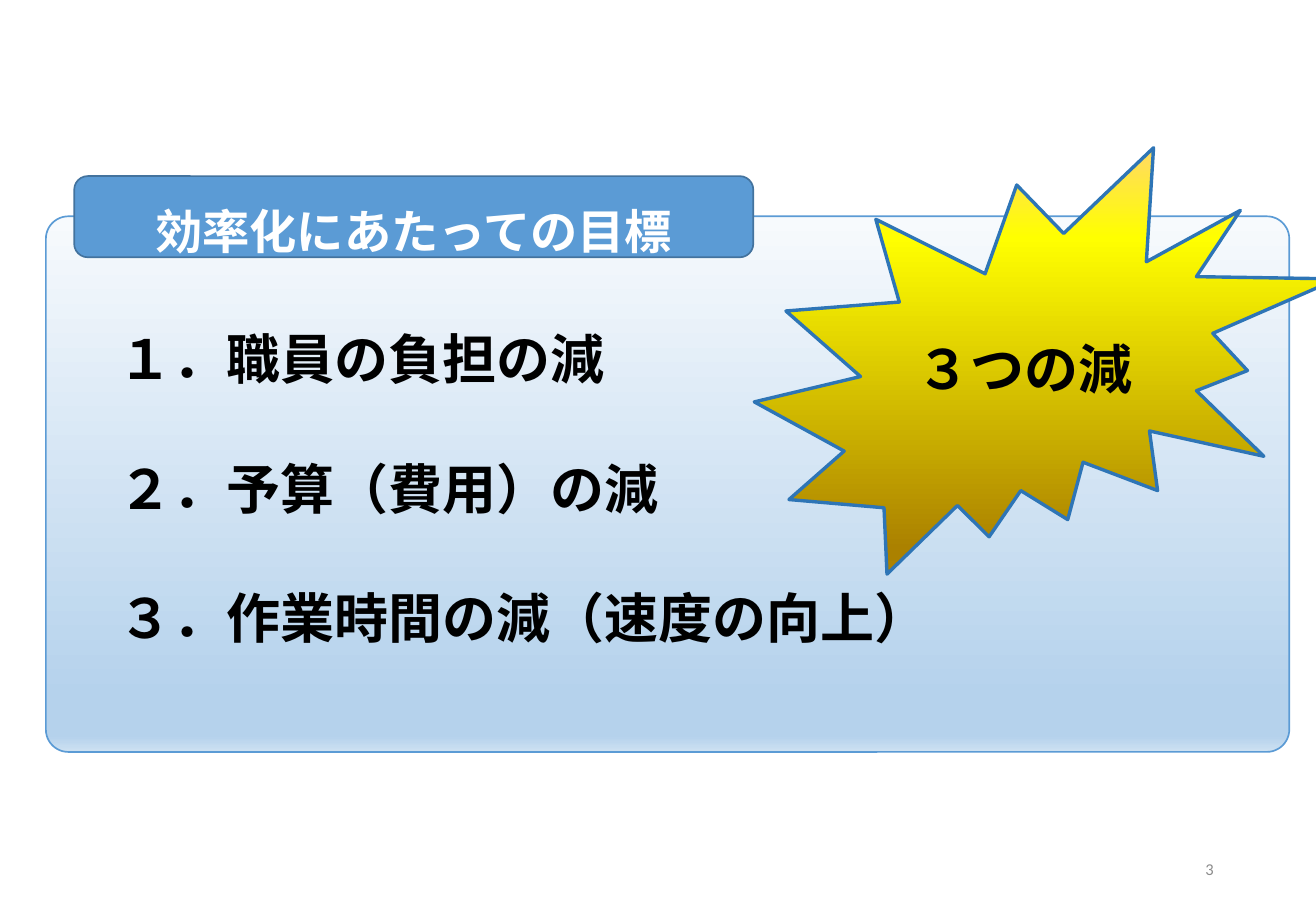
from dataclasses import dataclass

from lxml import etree
from pptx import Presentation
from pptx.dml.color import RGBColor
from pptx.enum.shapes import MSO_SHAPE
from pptx.enum.text import MSO_ANCHOR, PP_ALIGN
from pptx.oxml import parse_xml
from pptx.oxml.ns import nsdecls, qn
from pptx.util import Pt

ROUNDED, BURST = MSO_SHAPE.ROUNDED_RECTANGLE, MSO_SHAPE.EXPLOSION2
TOP, MIDDLE = MSO_ANCHOR.TOP, MSO_ANCHOR.MIDDLE
LEFT, CENTER, RIGHT = PP_ALIGN.LEFT, PP_ALIGN.CENTER, PP_ALIGN.RIGHT


@dataclass(frozen=True)
class Theme:
    body_font: str = "Noto Sans CJK JP"
    number_font: str = "Calibri"
    body_size: float = 32
    heading_size: float = 28
    number_size: float = 9.8
    black: str = "000000"
    white: str = "FFFFFF"
    gray: str = "8C8C8C"
    blue: str = "5B9BD5"
    heading_line: str = "43739E"
    burst_line: str = "2E75B6"
    panel_stops: tuple = ((0, "F7FAFD"), (90, "B5D2EC"), (97, "B5D2EC"), (100, "CEE1F2"))
    burst_stops: tuple = ((0, "AE8300"), (6, "AB8100"), (79, "FFFF00"), (100, "FFD966"))


THEME = Theme()
GOALS = ("１．職員の負担の減", "２．予算（費用）の減", "３．作業時間の減（速度の向上）")


def set_gradient(sp, stops, angle):
    """Fill with (percent, colour) stops along an angle in degrees."""
    sp.fill.background()
    old = sp._element.spPr.find(qn("a:noFill"))
    grad = parse_xml(f'<a:gradFill {nsdecls("a")} rotWithShape="1"/>')
    gs_list = etree.SubElement(grad, qn("a:gsLst"))
    for percent, color in stops:
        gs = etree.SubElement(gs_list, qn("a:gs"), pos=str(percent * 1000))
        etree.SubElement(gs, qn("a:srgbClr"), val=color)
    etree.SubElement(grad, qn("a:lin"), ang=str(angle * 60000), scaled="0")
    old.getparent().replace(old, grad)


def add_outlined(slide, kind, box, line, width):
    sp = slide.shapes.add_shape(kind, *map(Pt, box))
    sp.shadow.inherit = False
    sp.line.color.rgb = RGBColor.from_string(line)
    sp.line.width = Pt(width)
    return sp


def write(sp, lines, size, color, font=THEME.body_font, bold=True, frame=None, para=None):
    """Write one paragraph per line; frame and para hold format values."""
    tf = sp.text_frame
    for name, value in {"word_wrap": True, "vertical_anchor": MIDDLE, **(frame or {})}.items():
        setattr(tf, name, value)
    for i, line in enumerate(lines):
        p = tf.paragraphs[0] if i == 0 else tf.add_paragraph()
        for name, value in {"alignment": CENTER, **(para or {})}.items():
            setattr(p, name, value)
        if i == 0:
            p.space_before = Pt(0)
        r = p.add_run()
        r.text = line
        for name, value in {"name": font, "size": Pt(size), "bold": bold}.items():
            setattr(r.font, name, value)
        r.font.color.rgb = RGBColor.from_string(color)
        etree.SubElement(r._r.get_or_add_rPr(), qn("a:ea"), typeface=font)


def add_goal_panel(slide):
    sp = add_outlined(slide, ROUNDED, (27.2, 128.2, 737, 317.5), THEME.blue, 1)
    sp.adjustments[0] = 0.042
    set_gradient(sp, THEME.panel_stops, 90)
    write(sp, GOALS, THEME.body_size, THEME.black,
          frame={"vertical_anchor": TOP, "margin_left": Pt(39.2), "margin_top": Pt(61)},
          para={"alignment": LEFT, "space_before": Pt(38.4)})


def add_heading(slide, text):
    sp = add_outlined(slide, ROUNDED, (44, 104.4, 402.5, 48.1), THEME.heading_line, 1)
    sp.fill.solid()
    sp.fill.fore_color.rgb = RGBColor.from_string(THEME.blue)
    write(sp, [text], THEME.heading_size, THEME.white, para={"line_spacing": 1.5})


def add_burst(slide, text):
    sp = add_outlined(slide, BURST, (447.1, 87.6, 345.6, 252.7), THEME.burst_line, 2)
    set_gradient(sp, THEME.burst_stops, 270)
    write(sp, [text], THEME.body_size, THEME.black)


def add_page_number(slide, number):
    sp = slide.shapes.add_textbox(*map(Pt, (550.8, 500.4, 175.7, 28.8)))
    write(sp, [number], THEME.number_size, THEME.gray, THEME.number_font, False,
          para={"alignment": RIGHT})


def main():
    prs = Presentation()
    prs.slide_width, prs.slide_height = Pt(780), Pt(540)
    slide = prs.slides.add_slide(prs.slide_layouts[6])
    add_goal_panel(slide)
    add_page_number(slide, "3")
    add_heading(slide, "効率化にあたっての目標")
    add_burst(slide, "３つの減")
    prs.save("out.pptx")


if __name__ == "__main__":
    main()
